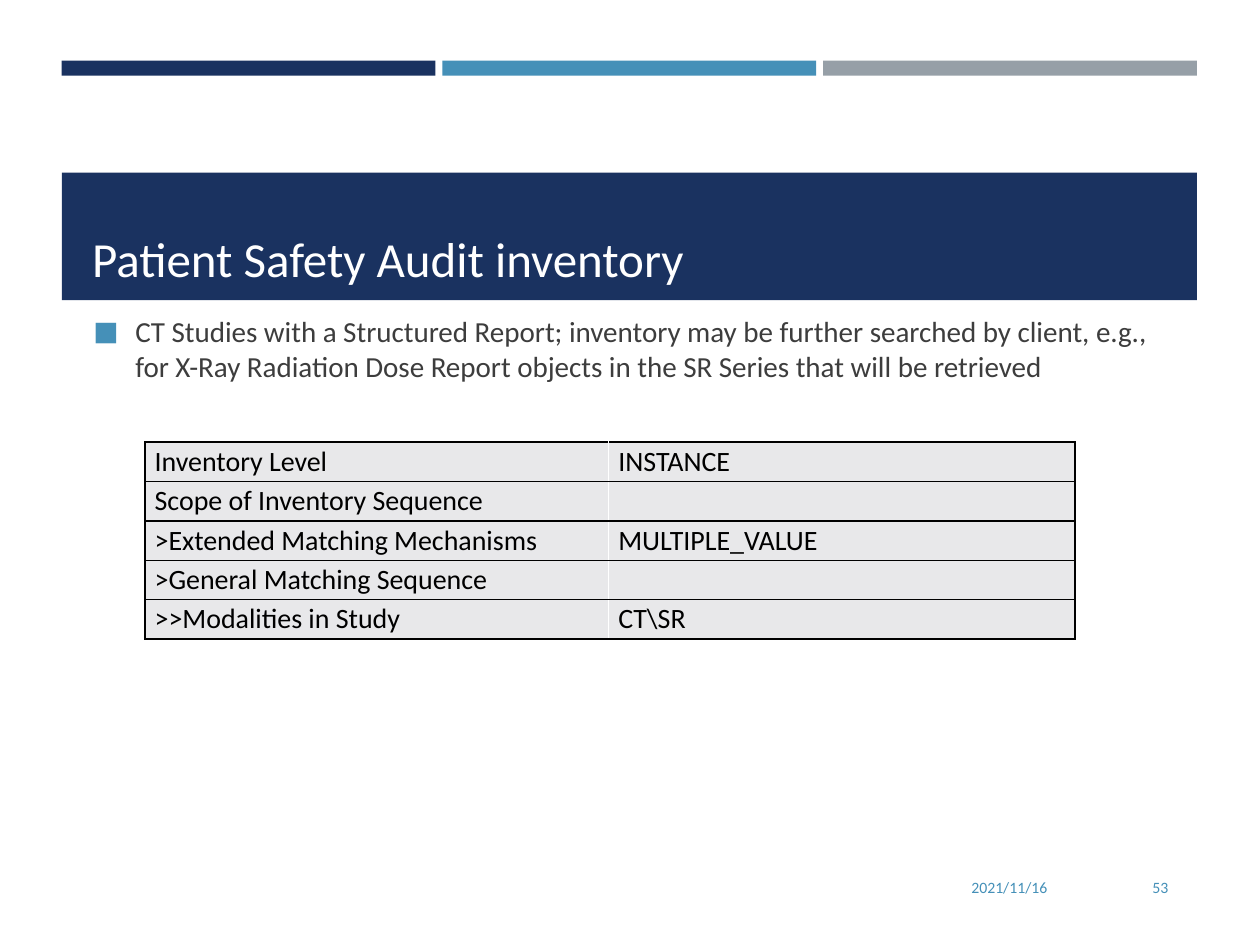
from dataclasses import dataclass
from typing import Any

import pptx
import pptx.dml.color
import pptx.enum.shapes
import pptx.enum.text
import pptx.oxml
import pptx.oxml.ns
import pptx.util

Pt = pptx.util.Pt
ANCHOR = pptx.enum.text.MSO_ANCHOR
ALIGN = pptx.enum.text.PP_ALIGN
NAVY, BLUE, GRAY = "1A3260", "4590B8", "969FA7"
WHITE, BLACK, CHARCOAL, PALE = "FFFFFF", "000000", "3D3D3D", "E8E8EA"
FONT = "Calibri"
BAND_LEFT, BAND_WIDTH = 35.3, 648.7
BAR_GAP = 4
BAR_WIDTH = (BAND_WIDTH - 2 * BAR_GAP) / 3
ROW_HEIGHT = 22.5
COLUMN_WIDTHS = (265, 266.4)
ROWS = (
    ("Inventory Level", "INSTANCE"),
    ("Scope of Inventory Sequence", ""),
    (">Extended Matching Mechanisms", "MULTIPLE_VALUE"),
    (">General Matching Sequence", ""),
    (">>Modalities in Study", "CT\\SR"),
)


@dataclass
class Box:
    left: float
    top: float
    width: float
    height: float

    def lengths(self) -> tuple:
        return tuple(Pt(value) for value in (self.left, self.top, self.width, self.height))


@dataclass
class Band:
    box: Box
    color: str


@dataclass
class Label:
    text: str
    box: Box
    size: float
    color: str
    align: Any = ALIGN.LEFT
    anchor: Any = ANCHOR.TOP


def rgb(color: str) -> pptx.dml.color.RGBColor:
    return pptx.dml.color.RGBColor.from_string(color)


def set_values(target: Any, values: dict) -> None:
    for name, value in values.items():
        setattr(target, name, value)


def format_font(font: Any, size: float, color: str) -> None:
    set_values(font, {"name": FONT, "size": Pt(size), "bold": False})
    font.color.rgb = rgb(color)


def draw_band(slide: Any, band: Band) -> None:
    shape = slide.shapes.add_shape(pptx.enum.shapes.MSO_SHAPE.RECTANGLE, *band.box.lengths())
    shape.shadow.inherit = False
    shape.fill.solid()
    shape.fill.fore_color.rgb = rgb(band.color)
    shape.line.fill.background()


def fill_label(shape: Any, label: Label) -> Any:
    set_values(shape, dict(zip(("left", "top", "width", "height"), label.box.lengths())))
    frame = shape.text_frame
    set_values(frame, {
        "text": label.text,
        "word_wrap": True,
        "auto_size": pptx.enum.text.MSO_AUTO_SIZE.NONE,
        "vertical_anchor": label.anchor,
    })
    paragraph = frame.paragraphs[0]
    set_values(paragraph, {"alignment": label.align, "space_before": Pt(0)})
    format_font(paragraph.runs[0].font, label.size, label.color)
    return paragraph


def add_bullet(paragraph: Any) -> None:
    properties = paragraph._p.get_or_add_pPr()
    properties.set("marL", str(Pt(24)))
    properties.set("indent", str(Pt(-24)))
    namespace = pptx.oxml.ns.nsdecls("a")
    for element in (
        f'<a:buClr {namespace}><a:srgbClr val="{BLUE}"/></a:buClr>',
        f'<a:buSzPct {namespace} val="92000"/>',
        f'<a:buFont {namespace} typeface="{FONT}"/>',
        f'<a:buChar {namespace} char="■"/>',
    ):
        properties.append(pptx.oxml.parse_xml(element))


def set_borders(cell: Any, colors: dict) -> None:
    properties = cell._tc.get_or_add_tcPr()
    namespace = pptx.oxml.ns.nsdecls("a")
    for position, (side, color) in enumerate(colors.items()):
        properties.insert(position, pptx.oxml.parse_xml(
            f'<a:{side} {namespace} w="{Pt(1)}"><a:solidFill>'
            f'<a:srgbClr val="{color}"/></a:solidFill></a:{side}>'))


def fill_cell(cell: Any, text: str, column: int) -> None:
    set_values(cell, {
        "text": text,
        "margin_left": Pt(5.6),
        "margin_right": Pt(5.6),
        "margin_top": Pt(1.4),
        "margin_bottom": Pt(1.4),
    })
    cell.fill.solid()
    cell.fill.fore_color.rgb = rgb(PALE)
    set_borders(cell, {
        "lnL": WHITE if column else BLACK,
        "lnR": BLACK if column else WHITE,
        "lnT": BLACK,
        "lnB": BLACK,
    })
    paragraph = cell.text_frame.paragraphs[0]
    for run in paragraph.runs:
        format_font(run.font, 16, BLACK)
    if not text:
        paragraph._p.append(pptx.oxml.parse_xml(
            f'<a:endParaRPr {pptx.oxml.ns.nsdecls("a")} sz="1600">'
            f'<a:latin typeface="{FONT}"/></a:endParaRPr>'))


def draw_inventory_table(slide: Any) -> None:
    box = Box(82.8, 252.7, sum(COLUMN_WIDTHS), ROW_HEIGHT * len(ROWS))
    table = slide.shapes.add_table(len(ROWS), len(COLUMN_WIDTHS), *box.lengths()).table
    set_values(table, {"first_row": False, "horz_banding": False})
    for column, width in enumerate(COLUMN_WIDTHS):
        table.columns[column].width = Pt(width)
    for row, texts in enumerate(ROWS):
        table.rows[row].height = Pt(ROW_HEIGHT)
        for column, text in enumerate(texts):
            fill_cell(table.cell(row, column), text, column)


def main() -> None:
    presentation = pptx.Presentation()
    set_values(presentation, {"slide_width": Pt(720), "slide_height": Pt(540)})
    slide = presentation.slides.add_slide(presentation.slide_layouts[1])
    title, body = slide.placeholders

    for index, color in enumerate((NAVY, BLUE, GRAY)):
        left = BAND_LEFT + index * (BAR_WIDTH + BAR_GAP)
        draw_band(slide, Band(Box(left, 34.7, BAR_WIDTH, 8.5), color))
    draw_band(slide, Band(Box(BAND_LEFT, 98.7, BAND_WIDTH, 72.8), NAVY))

    for placeholder in (title, body):
        slide.shapes._spTree.append(placeholder._element)
    fill_label(title, Label("Patient Safety Audit inventory", Box(45.4, 102.2, 629.3, 65.5),
                            28, WHITE, anchor=ANCHOR.BOTTOM))
    paragraph = fill_label(body, Label(
        "CT Studies with a Structured Report; inventory may be further searched by client, "
        "e.g., for X-Ray Radiation Dose Report objects in the SR Series that will be retrieved",
        Box(46.1, 175.7, 629.3, 65.5), 16.6, CHARCOAL))
    paragraph.space_after = Pt(6)
    add_bullet(paragraph)

    for text, left, width in (("2021/11/16", 437.8, 167.8), ("53", 614.2, 60.5)):
        label = Label(text, Box(left, 492.5, width, 28.8), 9, BLUE, ALIGN.RIGHT, ANCHOR.MIDDLE)
        fill_label(slide.shapes.add_textbox(*label.box.lengths()), label)
    draw_inventory_table(slide)
    presentation.save("out.pptx")


if __name__ == "__main__":
    main()
